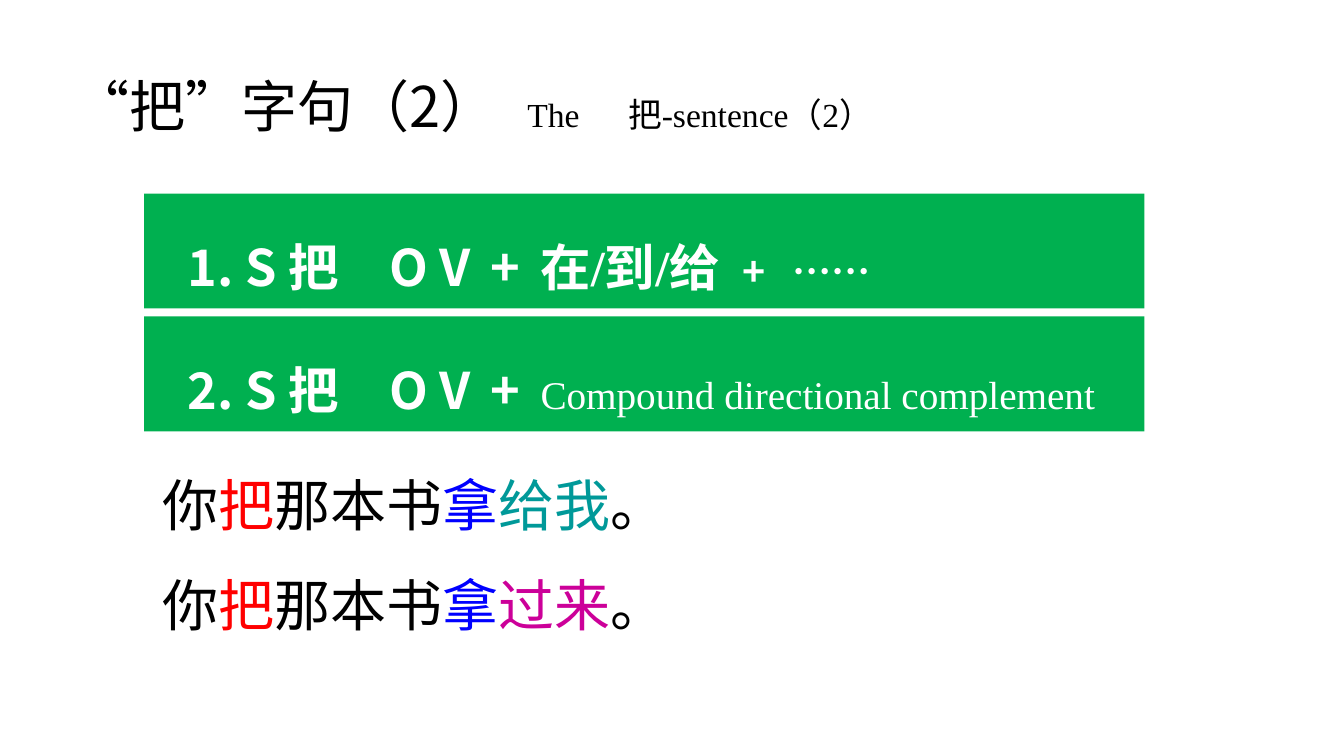
from dataclasses import dataclass

from lxml import etree
from pptx import Presentation
from pptx.dml.color import RGBColor
from pptx.enum.shapes import MSO_SHAPE
from pptx.enum.text import MSO_ANCHOR, MSO_AUTO_SIZE, PP_ALIGN
from pptx.oxml.ns import qn
from pptx.util import Inches, Pt

RECTANGLE = MSO_SHAPE.RECTANGLE
TOP, MIDDLE = MSO_ANCHOR.TOP, MSO_ANCHOR.MIDDLE
LEFT = PP_ALIGN.LEFT
NO_AUTOFIT = MSO_AUTO_SIZE.NONE
WIDTH, HEIGHT = Inches(13.33), Inches(7.5)


@dataclass(frozen=True)
class Theme:
    sans: str = "Noto Sans CJK SC"
    serif: str = "Times New Roman"
    black: str = "000000"
    white: str = "FFFFFF"
    bar: str = "00B050"
    marker: str = "FF0000"
    verb: str = "0000FF"
    recipient: str = "009999"
    direction: str = "CC0099"
    large: int = 40
    formula: int = 36
    detail: int = 28
    small: int = 24


THEME = Theme()


def across(percent):
    return int(WIDTH * percent / 100)


def down(percent):
    return int(HEIGHT * percent / 100)


def place(box, left, top, width, height):
    """Position a box in percent of the slide."""
    box.left, box.top = across(left), down(top)
    box.width, box.height = across(width), down(height)


def set_frame(frame, anchor):
    frame.word_wrap = True
    frame.auto_size = NO_AUTOFIT
    frame.vertical_anchor = anchor
    frame.margin_left = frame.margin_right = Inches(0.1)
    frame.margin_top = frame.margin_bottom = Inches(0.05)


def set_para(para, spacing, tabs=()):
    """Plain left-aligned paragraph with tab stops in percent of the width."""
    properties = para._p.get_or_add_pPr()
    properties.set("marL", "0")
    properties.set("indent", "0")
    etree.SubElement(properties, qn("a:buNone"))
    if tabs:
        stops = etree.SubElement(properties, qn("a:tabLst"))
        for tab in tabs:
            etree.SubElement(stops, qn("a:tab"), pos=str(across(tab)), algn="l")
    para.alignment = LEFT
    para.line_spacing = spacing
    para.space_before = para.space_after = Pt(0)


def add_span(para, text, size, face, color, bold=False):
    span = para.add_run()
    span.text = text
    span.font.size = Pt(size)
    span.font.name = face
    span.font.bold = bold
    span.font.color.rgb = RGBColor.from_string(color)
    east_asian = etree.Element(qn("a:ea"), typeface=THEME.sans)
    span._r.rPr.find(qn("a:latin")).addnext(east_asian)


def add_title(page):
    title = page.shapes.title
    place(title, 4.73, 9.33, 62.3, 9.73)
    set_frame(title.text_frame, TOP)
    para = title.text_frame.paragraphs[0]
    set_para(para, Pt(45), (37.13, 42.76))
    add_span(para, "“把”字句（2）\t", THEME.large, THEME.sans, THEME.black)
    add_span(para, "The\t把-sentence（2）", THEME.small, THEME.serif, THEME.black)
    # The title lies over the first bar
    page.shapes._spTree.append(title._element)


def add_formula_bar(page, row, spans, end_tabs):
    bar = page.shapes.add_shape(RECTANGLE, 0, 0, 0, 0)
    place(bar, 10.73, 25.6 + 16.27 * row, 74.42, 15.2)
    bar.shadow.inherit = False
    bar.fill.solid()
    bar.fill.fore_color.rgb = RGBColor.from_string(THEME.bar)
    bar.line.fill.background()
    set_frame(bar.text_frame, MIDDLE)
    bar.text_frame.margin_left = across(3.23)
    para = bar.text_frame.paragraphs[0]
    set_para(para, 1.5, (9.23, 16.43, 24.15) + end_tabs)
    add_span(para, f"{row + 1}. S\t把\tO V\t+\t", THEME.formula, THEME.sans,
             THEME.white, True)
    for text, size, face, bold in spans:
        add_span(para, text, size, face, THEME.white, bold)


def add_examples(page, endings):
    body = page.placeholders[1]
    place(body, 11.33, 57.07, 72.17, 26.53)
    frame = body.text_frame
    set_frame(frame, TOP)
    for index, (ending, color) in enumerate(endings):
        para = frame.add_paragraph() if index else frame.paragraphs[0]
        set_para(para, 1.5)
        for text, tone in (("你", THEME.black), ("把", THEME.marker),
                           ("那本书", THEME.black), ("拿", THEME.verb),
                           (ending, color), ("。", THEME.black)):
            add_span(para, text, THEME.large, THEME.serif, tone)


def main():
    deck = Presentation()
    deck.slide_width, deck.slide_height = WIDTH, HEIGHT
    page = deck.slides.add_slide(deck.slide_layouts[1])

    # Sentence patterns
    add_formula_bar(page, 0, (
        ("在/到/给\t", THEME.formula, THEME.serif, True),
        ("+\t……", THEME.detail, THEME.sans, True),
    ), (29.1, 47.18, 50.1))
    add_formula_bar(page, 1, (
        ("Compound directional complement", THEME.detail, THEME.serif, False),
    ), (28.13,))

    # Example sentences and heading
    add_examples(page, (("给我", THEME.recipient), ("过来", THEME.direction)))
    add_title(page)
    deck.save("out.pptx")


if __name__ == "__main__":
    main()
